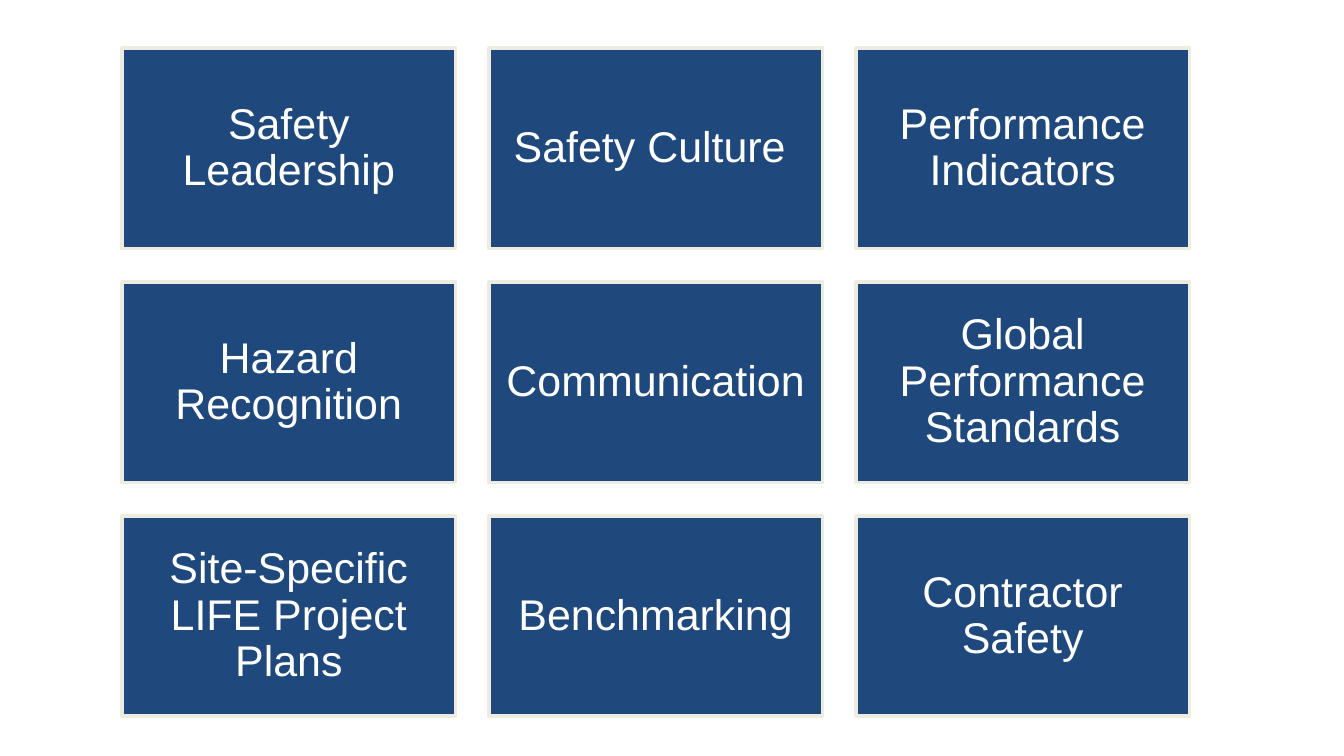
from pptx import Presentation, util as u
from pptx.dml.color import RGBColor
from pptx.enum import shapes, text

# Content: one list per row of tiles
ROWS = [
    ["Safety Leadership", "Safety Culture ", "Performance Indicators"],
    ["Hazard Recognition", "Communication", "Global Performance Standards"],
    ["Site-Specific LIFE Project Plans", "Benchmarking", "Contractor Safety"],
]

# Grid in inches
LEFT, TOP = 0.91, 0.36
WIDTH, HEIGHT = 2.48, 1.49
GAP = 0.25

# Format values
FRAME = {
    "word_wrap": True,
    "vertical_anchor": text.MSO_ANCHOR.MIDDLE,
    "margin_left": u.Inches(0.1),
    "margin_right": u.Inches(0.1),
    "margin_top": u.Inches(0.1),
    "margin_bottom": u.Inches(0.1),
}
PARA = {
    "alignment": text.PP_ALIGN.CENTER,
    "line_spacing": 0.9,
    "space_after": u.Pt(8),
}
FONT = {"name": "Arial", "size": u.Pt(23)}


def color(part, code):
    part.rgb = RGBColor.from_string(code)


def style(part, values):
    for key, value in values.items():
        setattr(part, key, value)


def add_tile(slide, label, left, top):
    tile = slide.shapes.add_shape(
        shapes.MSO_SHAPE.RECTANGLE,
        u.Inches(left), u.Inches(top), u.Inches(WIDTH), u.Inches(HEIGHT))
    tile.shadow.inherit = False
    tile.fill.solid()
    color(tile.fill.fore_color, "1F497D")
    color(tile.line.color, "EEECE1")
    tile.line.width = u.Pt(2)

    # Label
    frame = tile.text_frame
    frame.text = label
    para = frame.paragraphs[0]
    font = para.runs[0].font
    style(frame, FRAME)
    style(para, PARA)
    style(font, FONT)
    color(font.color, "FFFFFF")


def main():
    # Slide in 16:9
    deck = Presentation()
    deck.slide_width = u.Inches(10)
    deck.slide_height = u.Inches(10 * 9 / 16)
    slide = deck.slides.add_slide(deck.slide_layouts[6])

    # Tiles, evenly spaced
    for row, labels in enumerate(ROWS):
        for col, label in enumerate(labels):
            add_tile(slide, label,
                     LEFT + col * (WIDTH + GAP),
                     TOP + row * (HEIGHT + GAP))

    deck.save("out.pptx")


if __name__ == "__main__":
    main()
